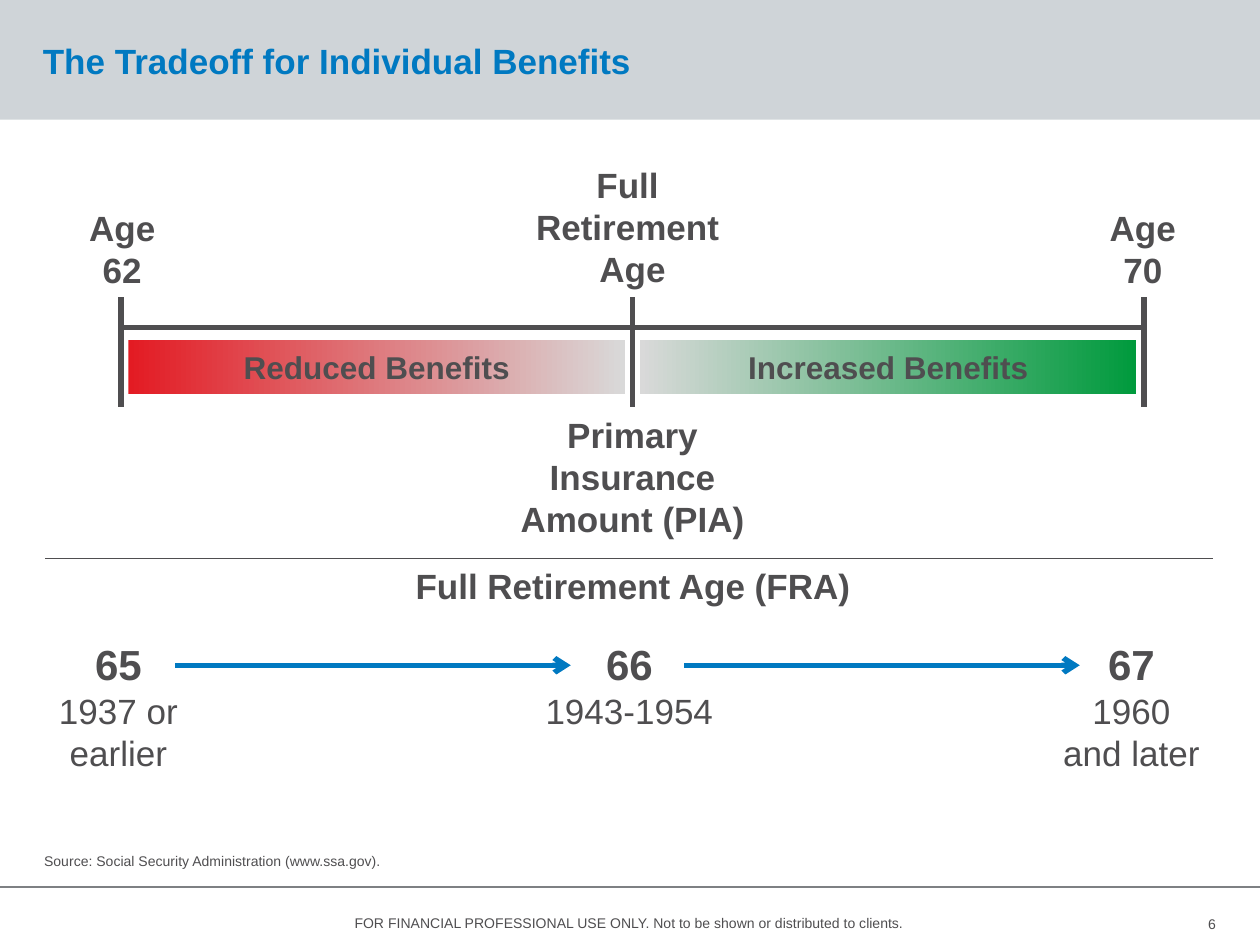
from pptx import Presentation
from pptx.dml.color import RGBColor
from pptx.enum.shapes import MSO_CONNECTOR, MSO_SHAPE
from pptx.enum.text import MSO_ANCHOR, MSO_AUTO_SIZE, PP_ALIGN
from pptx.oxml.ns import qn
from pptx.util import Inches, Pt
from lxml import etree

LEFT, CENTER, RIGHT = PP_ALIGN.LEFT, PP_ALIGN.CENTER, PP_ALIGN.RIGHT
TOP, MIDDLE, BOTTOM = MSO_ANCHOR.TOP, MSO_ANCHOR.MIDDLE, MSO_ANCHOR.BOTTOM
RECTANGLE, STRAIGHT = MSO_SHAPE.RECTANGLE, MSO_CONNECTOR.STRAIGHT
NO_AUTOFIT = MSO_AUTO_SIZE.NONE

INK = RGBColor(0x4F, 0x4E, 0x50)
BLUE = RGBColor(0x00, 0x79, 0xC1)
BAND = RGBColor(0xCF, 0xD4, 0xD8)
RULE = RGBColor(0x7E, 0x80, 0x83)
RED = RGBColor(0xE3, 0x1B, 0x23)
GREEN = RGBColor(0x00, 0x9A, 0x3D)
PALE = RGBColor(0xD9, 0xD9, 0xD9)


class BenefitsPage:
    """Builds the slide's elements in one shared style."""

    def __init__(self, page):
        self.page = page
        self.shapes = page.shapes

    def fill_text(self, box, lines, align=CENTER, anchor=TOP, inset=None, wrap=True):
        frame = box.text_frame
        frame.word_wrap = wrap
        frame.auto_size = NO_AUTOFIT
        frame.vertical_anchor = anchor
        if inset is not None:
            side, end = inset
            margins = {"margin_left": side, "margin_right": side,
                       "margin_top": end, "margin_bottom": end}
            for name, value in margins.items():
                setattr(frame, name, Inches(value))
        for index, (text, size, bold, color) in enumerate(lines):
            para = frame.add_paragraph() if index else frame.paragraphs[0]
            para.text = text
            para.alignment = align
            style = {"name": "Arial", "size": Pt(size), "bold": bold}
            for span in para.runs:
                for name, value in style.items():
                    setattr(span.font, name, value)
                span.font.color.rgb = color

    def title(self, text, left, top, width, height):
        box = self.shapes.title
        place = {"left": left, "top": top, "width": width, "height": height}
        for name, value in place.items():
            setattr(box, name, Inches(value))
        self.fill_text(box, [(text, 20, True, BLUE)], LEFT, MIDDLE, (0, 0))
        box.text_frame.paragraphs[0].line_spacing = Pt(20)

    def text(self, lines, left, top, width, height, **layout):
        box = self.shapes.add_textbox(*map(Inches, (left, top, width, height)))
        self.fill_text(box, lines, **layout)

    def heading(self, text, left, top, width, height):
        self.text([(text, 20, True, INK)], left, top, width, height)

    def small(self, text, left, top, width, height, **layout):
        self.text([(text, 8, False, INK)], left, top, width, height, **layout)

    def rectangle(self, left, top, width, height):
        box = self.shapes.add_shape(RECTANGLE, *map(Inches, (left, top, width, height)))
        box.shadow.inherit = False
        box.line.fill.background()
        return box

    def header_band(self):
        band = self.rectangle(0, 0, 10, 0.95)
        band.fill.solid()
        band.fill.fore_color.rgb = BAND
        self.shapes.title.element.addprevious(band.element)

    def gradient_bar(self, text, left, start, end):
        bar = self.rectangle(left, 2.7, 3.94, 0.43)
        bar.fill.gradient()
        bar.fill.gradient_angle = 0
        for stop, position, color in zip(bar.fill.gradient_stops, (0, 1), (start, end)):
            stop.position = position
            stop.color.rgb = color
        self.fill_text(bar, [(text, 18, True, INK)], anchor=MIDDLE, inset=(0.1, 0), wrap=False)

    def line(self, x1, y1, x2, y2, color=INK, width=3, arrow=False):
        line = self.shapes.add_connector(STRAIGHT, *map(Inches, (x1, y1, x2, y2)))
        line.line.color.rgb = color
        line.line.width = Pt(width)
        if arrow:
            outline = line.element.spPr.find(qn("a:ln"))
            etree.SubElement(outline, qn("a:tailEnd"), type="arrow")
        etree.SubElement(line.element.spPr, qn("a:effectLst"))


def main():
    deck = Presentation()
    deck.slide_width, deck.slide_height = Inches(10), Inches(7.5)
    page = BenefitsPage(deck.slides.add_slide(deck.slide_layouts[5]))

    page.header_band()
    page.line(0, 7.04, 10, 7.04, RULE, 0.75)
    page.title("The Tradeoff for Individual Benefits", 0.34, 0.18, 9.29, 0.65)

    ticks = (0.96, 5.02, 9.08)
    page.line(ticks[0], 2.6, ticks[-1], 2.6)
    for tick in ticks:
        page.line(tick, 2.36, tick, 3.23)
    page.heading("Age 62", 0.46, 1.59, 1.02, 0.77)
    page.heading("Age 70", 8.56, 1.59, 1.02, 0.77)
    page.heading("Full \vRetirement \vAge", 3.76, 1.25, 2.52, 1.11)
    page.gradient_bar("Reduced Benefits", ticks[0] + 0.06, RED, PALE)
    page.gradient_bar("Increased Benefits", ticks[1] + 0.06, PALE, GREEN)
    page.heading("Primary Insurance Amount (PIA)", 3.76, 3.23, 2.52, 1.11)

    page.line(0.36, 4.43, 9.63, 4.43, width=0.75)
    page.heading("Full Retirement Age (FRA)", 2.56, 4.43, 4.93, 0.44)
    milestones = (
        ("65", "1937 or earlier", 0.27, 1.34, 1.18),
        ("66", "1943-1954", 4.09, 1.81, 0.84),
        ("67", "1960 and later", 8.31, 1.34, 1.18),
    )
    for age, years, left, width, height in milestones:
        lines = [(age, 24, True, INK), (years, 20, False, INK)]
        page.text(lines, left, 5.02, width, height)
    for start in (1.39, 5.43):
        page.line(start, 5.28, start + 3.14, 5.28, BLUE, arrow=True)

    page.small("Source: Social Security Administration (www.ssa.gov).",
               0.35, 6.77, 9.01, 0.13, align=LEFT, anchor=BOTTOM, inset=(0, 0))
    page.small("FOR FINANCIAL PROFESSIONAL USE ONLY. Not to be shown or distributed to clients.",
               1.64, 7.21, 6.71, 0.24)
    page.small("6", 9.25, 7.21, 0.4, 0.24, align=RIGHT, anchor=MIDDLE, inset=(0, 0))
    deck.save("out.pptx")


if __name__ == "__main__":
    main()
